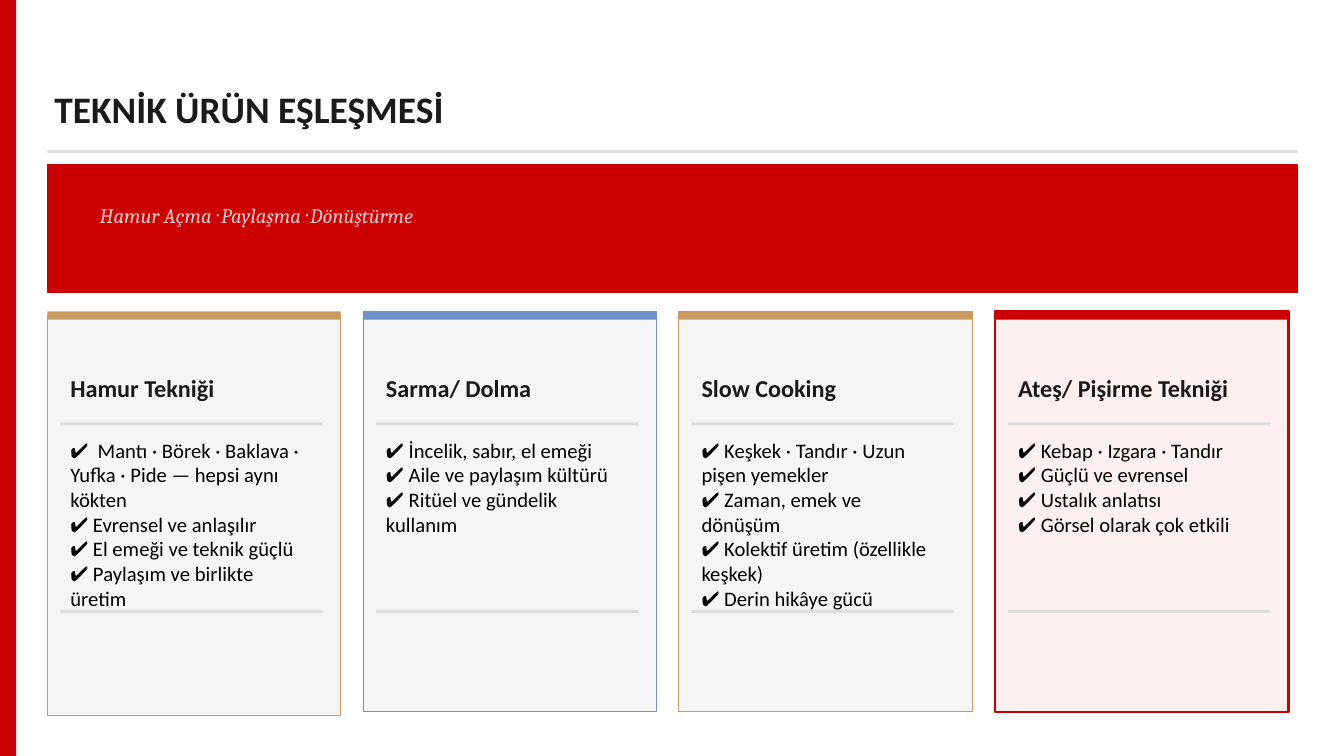
"""Build the slide that matches cooking techniques with dishes."""
from dataclasses import dataclass

from pptx import Presentation
from pptx.dml.color import RGBColor
from pptx.enum.shapes import MSO_SHAPE
from pptx.enum.text import MSO_ANCHOR, MSO_AUTO_SIZE, PP_ALIGN
from pptx.slide import Slide
from pptx.text.text import TextFrame
from pptx.util import Emu, Pt

EMU_PER_PX = 9144
COLORS = {
    "red": "CC0000",
    "gold": "C89A60",
    "blue": "7090C8",
    "rule": "DDDDDD",
    "card": "F5F5F5",
    "blush": "FFF0F0",
    "pink": "FFCCCC",
    "heading": "1A1A1A",
    "body": "000000",
}
MARGIN = 47
CONTENT_WIDTH = 1240
CARD_TOP, CARD_WIDTH, CARD_HEIGHT = 309, 291, 397
INNER_OFFSET, INNER_WIDTH = 13, 260


@dataclass(frozen=True)
class Box:
    left: int
    top: int
    width: int
    height: int

    def emu(self) -> tuple[Emu, ...]:
        sides = (self.left, self.top, self.width, self.height)
        return tuple(Emu(side * EMU_PER_PX) for side in sides)


@dataclass(frozen=True)
class Style:
    size: float
    color: str
    font: str = "Calibri"
    bold: bool = False
    italic: bool = False


@dataclass(frozen=True)
class Card:
    heading: str
    points: tuple[str, ...]
    text_height: int
    accent: str
    fill: str = "card"
    line_width: float = 0.5
    drop: int = 0


TITLE = Style(26.7, "heading", bold=True)
SUBTITLE = Style(14.7, "pink", font="Cambria", italic=True)
HEADING = Style(17.3, "heading", bold=True)
BODY = Style(14.7, "body")

CARDS = (
    Card(
        "Hamur Tekniği",
        (
            "✔  Mantı · Börek · Baklava · Yufka · Pide — hepsi aynı kökten",
            "✔ Evrensel ve anlaşılır",
            "✔ El emeği ve teknik güçlü",
            "✔ Paylaşım ve birlikte üretim",
        ),
        158, "gold", drop=4,
    ),
    Card(
        "Sarma/ Dolma",
        (
            "✔ İncelik, sabır, el emeği",
            "✔ Aile ve paylaşım kültürü",
            "✔ Ritüel ve gündelik kullanım",
        ),
        109, "blue",
    ),
    Card(
        "Slow Cooking",
        (
            "✔ Keşkek · Tandır · Uzun pişen yemekler",
            "✔ Zaman, emek ve dönüşüm",
            "✔ Kolektif üretim (özellikle keşkek)",
            "✔ Derin hikâye gücü",
        ),
        158, "gold",
    ),
    Card(
        "Ateş/ Pişirme Tekniği",
        (
            "✔ Kebap · Izgara · Tandır",
            "✔ Güçlü ve evrensel",
            "✔ Ustalık anlatısı",
            "✔ Görsel olarak çok etkili",
        ),
        109, "red", fill="blush", line_width=1.5,
    ),
)


def color(name: str) -> RGBColor:
    return RGBColor.from_string(COLORS[name])


def add_panel(page: Slide, box: Box, fill: str, line: str = "", line_width: float = 0.5) -> None:
    panel = page.shapes.add_shape(MSO_SHAPE.RECTANGLE, *box.emu())
    panel.shadow.inherit = False
    panel.fill.solid()
    panel.fill.fore_color.rgb = color(fill)
    if line:
        panel.line.color.rgb = color(line)
        panel.line.width = Pt(line_width)
    else:
        panel.line.fill.background()


def write(frame: TextFrame, lines: tuple[str, ...], style: Style) -> None:
    frame.text = "\n".join(lines)
    frame.word_wrap = True
    frame.auto_size = MSO_AUTO_SIZE.SHAPE_TO_FIT_TEXT
    frame.vertical_anchor = MSO_ANCHOR.TOP
    for para in frame.paragraphs:
        para.alignment = PP_ALIGN.LEFT
        para.font.name = style.font
        para.font.size = Pt(style.size)
        para.font.bold = style.bold
        para.font.italic = style.italic
        para.font.color.rgb = color(style.color)


def add_text(page: Slide, box: Box, lines: tuple[str, ...], style: Style) -> None:
    write(page.shapes.add_textbox(*box.emu()).text_frame, lines, style)


def add_title(page: Slide, box: Box, text: str) -> None:
    title = page.shapes.title
    title.left, title.top, title.width, title.height = box.emu()
    write(title.text_frame, (text,), TITLE)


def add_card(page: Slide, card: Card, left: int) -> None:
    inner = left + INNER_OFFSET
    body = Box(left, CARD_TOP + card.drop, CARD_WIDTH, CARD_HEIGHT)
    add_panel(page, body, card.fill, card.accent, card.line_width)
    add_panel(page, Box(left, CARD_TOP, CARD_WIDTH, 8), card.accent)
    add_text(page, Box(inner, 365, INNER_WIDTH, 39), (card.heading,), HEADING)
    add_text(page, Box(inner, 429, INNER_WIDTH, card.text_height), card.points, BODY)
    for rule_top in (419, 605):
        add_panel(page, Box(inner, rule_top, INNER_WIDTH, 3), "rule")


def main() -> None:
    deck = Presentation()
    deck.slide_width = Emu(1333 * EMU_PER_PX)
    deck.slide_height = Emu(750 * EMU_PER_PX)
    page = deck.slides.add_slide(deck.slide_layouts.get_by_name("Title Only"))
    add_panel(page, Box(0, 0, 16, 750), "red")
    add_title(page, Box(44, 80, CONTENT_WIDTH, 55), "TEKNİK ÜRÜN EŞLEŞMESİ")
    add_panel(page, Box(MARGIN, 149, CONTENT_WIDTH, 3), "rule")
    add_panel(page, Box(MARGIN, 163, CONTENT_WIDTH, 127), "red", "red")
    add_text(page, Box(89, 196, 1178, 35), ("Hamur Açma · Paylaşma · Dönüştürme",), SUBTITLE)
    for index, card in enumerate(CARDS):
        add_card(page, card, MARGIN + index * 940 // 3)
    deck.save("out.pptx")


if __name__ == "__main__":
    main()
